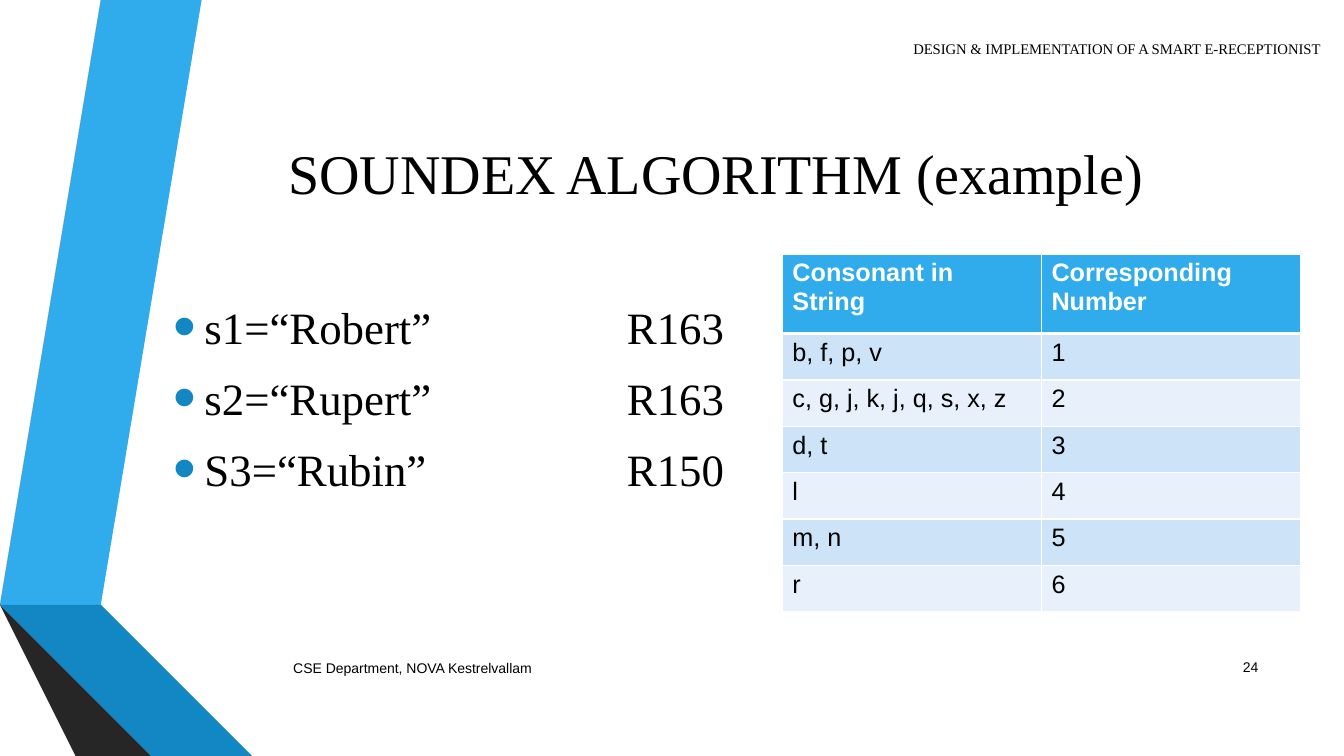
from typing import NamedTuple

from lxml import etree
from pptx import Presentation
from pptx.dml import color as dml
from pptx.enum import text as enum_text
from pptx.oxml import ns
from pptx import util as u


class Theme:
    SKY, BLUE, NAVY = "30ACEC", "1287C3", "0C5A82"
    GREY, CHARCOAL, COAL = "595959", "404040", "262626"
    BLACK, WHITE = "000000", "FFFFFF"
    BANDS = ("CDE3F8", "E8F1FB")
    SERIF, SANS = "Times New Roman", "Arial"
    TITLE, BODY, TABLE, HEADER, FOOTER = 40, 32, 18, 10.5, 10


class Ribbon(NamedTuple):
    color: str
    points: list[tuple[float, float]]


class Style(NamedTuple):
    font: str
    size: float
    color: str = Theme.BLACK
    bold: bool = False


class Label(NamedTuple):
    content: str
    box: tuple[float, float, float, float]
    style: Style
    align: enum_text.PP_ALIGN
    anchor: enum_text.MSO_ANCHOR


LEFT, CENTER, RIGHT = (enum_text.PP_ALIGN.LEFT, enum_text.PP_ALIGN.CENTER,
                       enum_text.PP_ALIGN.RIGHT)
TOP, MIDDLE = enum_text.MSO_ANCHOR.TOP, enum_text.MSO_ANCHOR.MIDDLE

RIBBONS = [
    Ribbon(Theme.SKY, [(0.5, 5.78), (0.77, 5.83), (1.73, 0), (1.45, 0)]),
    Ribbon(Theme.GREY, [(1.39, 0), (1.11, 0), (0.16, 5.73), (0.44, 5.77)]),
    Ribbon(Theme.COAL, [(0.16, 5.73), (1.45, 7.5), (1.51, 7.5)]),
    Ribbon(Theme.NAVY, [(0.5, 5.79), (2.08, 7.5), (2.14, 7.5)]),
    Ribbon(Theme.BLUE, [(0.5, 5.79), (2.14, 7.5), (2.83, 7.5), (0.77, 5.83), (0.5, 5.78)]),
    Ribbon(Theme.CHARCOAL, [(2.02, 7.5), (0.48, 5.83), (0.43, 5.78), (0.44, 5.77),
                            (0.16, 5.73), (1.51, 7.5)]),
]

FOOTER_STYLE = Style(Theme.SANS, Theme.FOOTER)
LABELS = [
    Label("SOUNDEX ALGORITHM (example)", (1.62, 0.75, 10.96, 1.92),
          Style(Theme.SERIF, Theme.TITLE), CENTER, MIDDLE),
    Label("CSE Department, NOVA Kestrelvallam", (2.81, 6.43, 7.75, 0.4),
          FOOTER_STYLE, LEFT, MIDDLE),
    Label("24", (11.98, 6.42, 0.6, 0.4), FOOTER_STYLE, RIGHT, MIDDLE),
    Label("DESIGN & IMPLEMENTATION OF A SMART E-RECEPTIONIST", (8.96, 0.35, 4.37, 0.28),
          Style(Theme.SERIF, Theme.HEADER), LEFT, TOP),
]

EXAMPLES = [("s1=“Robert”", "R163"), ("s2=“Rupert”", "R163"), ("S3=“Rubin”", "R150")]
CODE_TAB = 4.5

CODES = [
    ("Consonant in String", "Corresponding Number"),
    ("b, f, p, v", "1"),
    ("c, g, j, k, j, q, s, x, z", "2"),
    ("d, t", "3"),
    ("l", "4"),
    ("m, n", "5"),
    ("r", "6"),
]


def add_run(paragraph, content: str, style: Style) -> None:
    run = paragraph.add_run()
    run.text = content
    run.font.name = style.font
    run.font.size = u.Pt(style.size)
    run.font.bold = style.bold
    run.font.color.rgb = dml.RGBColor.from_string(style.color)


def add_frame(slide, box: tuple[float, float, float, float], anchor: enum_text.MSO_ANCHOR):
    frame = slide.shapes.add_textbox(*map(u.Inches, box)).text_frame
    frame.word_wrap = True
    frame.vertical_anchor = anchor
    return frame


def add_label(slide, label: Label) -> None:
    paragraph = add_frame(slide, label.box, label.anchor).paragraphs[0]
    paragraph.alignment = label.align
    add_run(paragraph, label.content, label.style)


def add_element(parent, tag: str, **attributes: str):
    return etree.SubElement(parent, ns.qn(tag), attributes)


def add_ribbons(slide) -> None:
    group = slide.shapes.add_group_shape()
    for ribbon in RIBBONS:
        start, *rest = ribbon.points
        builder = group.shapes.build_freeform(*start, scale=u.Inches(1))
        builder.add_line_segments(rest, close=True)
        shape = builder.convert_to_shape()
        shape.shadow.inherit = False
        shape.fill.solid()
        shape.fill.fore_color.rgb = dml.RGBColor.from_string(ribbon.color)
        shape.line.fill.background()


def format_bullet(paragraph) -> None:
    properties = paragraph._p.get_or_add_pPr()
    indent = u.Inches(0.31)
    properties.set("marL", str(indent))
    properties.set("indent", str(-indent))
    before = add_element(properties, "a:spcBef")
    add_element(before, "a:spcPct", val="20000")
    after = add_element(properties, "a:spcAft")
    add_element(after, "a:spcPts", val="600")
    bullet_color = add_element(properties, "a:buClr")
    add_element(bullet_color, "a:srgbClr", val=Theme.BLUE)
    add_element(properties, "a:buSzPct", val="145000")
    add_element(properties, "a:buFont", typeface=Theme.SANS)
    add_element(properties, "a:buChar", char="•")
    tabs = add_element(properties, "a:tabLst")
    add_element(tabs, "a:tab", pos=str(u.Inches(CODE_TAB)), algn="l")


def add_examples(slide) -> None:
    frame = add_frame(slide, (1.62, 2.92, 10.96, 3.42), TOP)
    for index, (name, code) in enumerate(EXAMPLES):
        paragraph = frame.add_paragraph() if index else frame.paragraphs[0]
        format_bullet(paragraph)
        add_run(paragraph, f"{name}\t{code}", Style(Theme.SERIF, Theme.BODY))


def set_borders(cell, top: float, bottom: float) -> None:
    properties = cell._tc.get_or_add_tcPr()
    widths = {"a:lnL": 1, "a:lnR": 1, "a:lnT": top, "a:lnB": bottom}
    for position, (tag, width) in enumerate(widths.items()):
        line = etree.Element(ns.qn(tag), w=str(u.Pt(width)))
        fill = add_element(line, "a:solidFill")
        add_element(fill, "a:srgbClr", val=Theme.WHITE)
        properties.insert(position, line)


def add_code_table(slide) -> None:
    box = map(u.Inches, (7.76, 2.52, 5.14, 3.56))
    table = slide.shapes.add_table(len(CODES), len(CODES[0]), *box).table
    for row_index, values in enumerate(CODES):
        heading = row_index == 0
        table.rows[row_index].height = u.Inches(0.79 if heading else 0.46)
        fill = Theme.SKY if heading else Theme.BANDS[(row_index - 1) % 2]
        style = Style(Theme.SANS, Theme.TABLE,
                      Theme.WHITE if heading else Theme.BLACK, heading)
        for column_index, value in enumerate(values):
            cell = table.cell(row_index, column_index)
            cell.fill.solid()
            cell.fill.fore_color.rgb = dml.RGBColor.from_string(fill)
            set_borders(cell, top=3 if row_index == 1 else 1, bottom=3 if heading else 1)
            add_run(cell.text_frame.paragraphs[0], value, style)


def main() -> None:
    presentation = Presentation()
    presentation.slide_width = u.Inches(13.33)
    presentation.slide_height = u.Inches(7.5)
    slide = presentation.slides.add_slide(presentation.slide_layouts[6])

    # Folded ribbons on the left edge
    add_ribbons(slide)
    # Title, footer, slide number and running header
    for label in LABELS:
        add_label(slide, label)
    # Names with their Soundex codes
    add_examples(slide)
    # Consonant to digit table
    add_code_table(slide)

    presentation.save("out.pptx")


if __name__ == "__main__":
    main()
